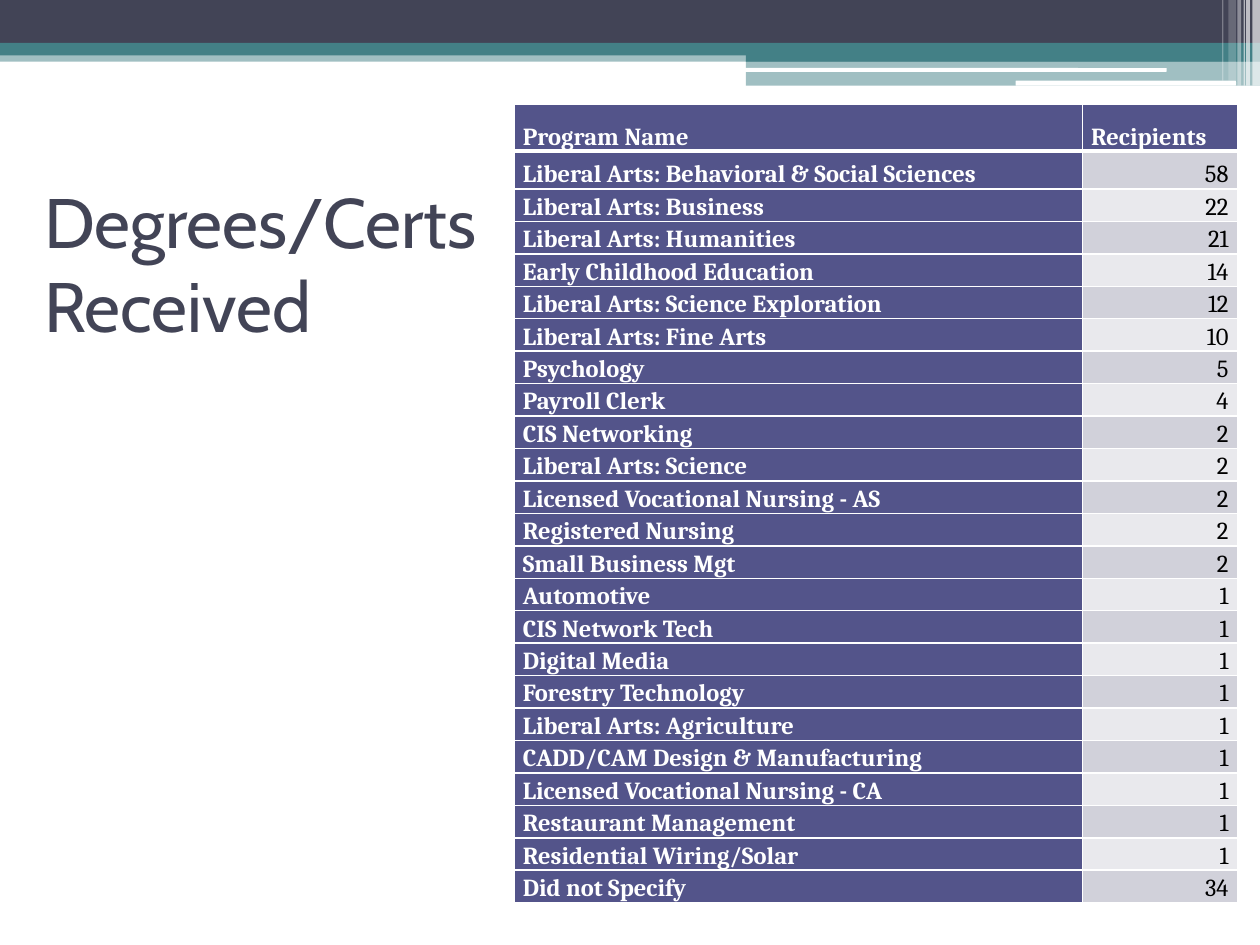
import pptx
import pptx.dml.color
import pptx.enum.shapes
import pptx.enum.text
import pptx.oxml
import pptx.oxml.ns
import pptx.util
from lxml import etree

Inches = pptx.util.Inches
Pt = pptx.util.Pt
RGBColor = pptx.dml.color.RGBColor
Anchor = pptx.enum.text.MSO_ANCHOR
Align = pptx.enum.text.PP_ALIGN
Shape = pptx.enum.shapes.MSO_SHAPE
qn = pptx.oxml.ns.qn

WHITE = RGBColor(0xFF, 0xFF, 0xFF)
BLACK = RGBColor(0x00, 0x00, 0x00)
SLATE = RGBColor(0x42, 0x44, 0x56)
TEAL = RGBColor(0x43, 0x80, 0x86)
INDIGO = RGBColor(0x53, 0x54, 0x8A)
STRIPES = (RGBColor(0xD1, 0xD1, 0xDA), RGBColor(0xE9, 0xE9, 0xED))

# Banner parts: left, top, width, height, colour, opacity in percent
BANDS = [
    (0, 0.4, 10, 0.09, TEAL, 50),
    (0, 0, 10, 0.34, SLATE, 100),
    (0, 0.34, 10, 0.1, TEAL, 100),
    (5.92, 0.39, 4.08, 0.1, TEAL, 100),
    (5.92, 0.48, 4.08, 0.2, TEAL, 50),
]
ROUNDED_LINES = [
    (5.91, 0.54, 3.35, 0.03, WHITE, 100),
    (8.06, 0.64, 1.75, 0.04, WHITE, 100),
]
VERTICAL_LINES = [
    (9.94, 0, 0.06, 0.68, WHITE, 65),
    (9.89, 0, 0.03, 0.68, WHITE, 65),
    (9.87, 0, 0.01, 0.68, WHITE, 60),
    (9.82, 0, 0.03, 0.68, WHITE, 40),
    (9.75, 0, 0.06, 0.64, WHITE, 20),
    (9.7, 0, 0.01, 0.64, WHITE, 30),
]

HEADINGS = ("Program Name", "Recipients")
PROGRAMS = [
    ("Liberal Arts: Behavioral & Social Sciences", 58),
    ("Liberal Arts: Business", 22),
    ("Liberal Arts: Humanities", 21),
    ("Early Childhood Education", 14),
    ("Liberal Arts: Science Exploration", 12),
    ("Liberal Arts: Fine Arts", 10),
    ("Psychology", 5),
    ("Payroll Clerk", 4),
    ("CIS Networking", 2),
    ("Liberal Arts: Science", 2),
    ("Licensed Vocational Nursing - AS", 2),
    ("Registered Nursing", 2),
    ("Small Business Mgt", 2),
    ("Automotive", 1),
    ("CIS Network Tech", 1),
    ("Digital Media", 1),
    ("Forestry Technology", 1),
    ("Liberal Arts: Agriculture", 1),
    ("CADD/CAM Design & Manufacturing", 1),
    ("Licensed Vocational Nursing - CA", 1),
    ("Restaurant Management", 1),
    ("Residential Wiring/Solar", 1),
    ("Did not Specify", 34),
]


def set_all(target, values):
    for name, value in values.items():
        setattr(target, name, value)


def add_band(page, box, kind, left, top, width, height, colour, opacity):
    """Add one borderless banner part, offset from the banner's corner."""
    band = page.shapes.add_shape(
        kind, box[0] + Inches(left), box[1] + Inches(top),
        Inches(width), Inches(height))
    band.shadow.inherit = False
    band.line.fill.background()
    band.fill.solid()
    band.fill.fore_color.rgb = colour
    if opacity < 100:
        tint = band.element.spPr.find(".//" + qn("a:srgbClr"))
        etree.SubElement(tint, qn("a:alpha"), val=str(opacity * 1000))


def add_banner(page, box):
    groups = ((Shape.RECTANGLE, BANDS), (Shape.ROUNDED_RECTANGLE, ROUNDED_LINES),
              (Shape.RECTANGLE, VERTICAL_LINES))
    for kind, parts in groups:
        for part in parts:
            add_band(page, box, kind, *part)


def place_title(page, box, text):
    title = page.shapes.title
    set_all(title, dict(zip(("left", "top", "width", "height"), box)))
    set_all(title.text_frame, {"text": text, "word_wrap": True,
                               "vertical_anchor": Anchor.MIDDLE})
    para = title.text_frame.paragraphs[0]
    para.alignment = Align.LEFT
    set_all(para.runs[0].font, {"name": "Cabin", "size": Pt(40)})
    para.runs[0].font.color.rgb = SLATE
    # Bring the title in front of the banner
    page.shapes.element.append(title.element)


def set_borders(cell, widths):
    props = cell._tc.get_or_add_tcPr()
    for side, points in widths.items():
        line = etree.SubElement(props, qn("a:ln" + side), w=str(Pt(points)))
        fill = etree.SubElement(line, qn("a:solidFill"))
        etree.SubElement(fill, qn("a:srgbClr"), val=str(WHITE))


def format_cell(cell, text, fill, colour, bold, align, widths):
    set_borders(cell, widths)
    cell.fill.solid()
    cell.fill.fore_color.rgb = fill
    set_all(cell, {"text": text, "vertical_anchor": Anchor.BOTTOM,
                   "margin_left": Inches(0.07), "margin_right": Inches(0.07),
                   "margin_top": 0, "margin_bottom": 0})
    para = cell.text_frame.paragraphs[0]
    set_all(para, {"alignment": align, "line_spacing": 1.15})
    span = para.runs[0]
    set_all(span.font, {"name": "Cambria", "size": Pt(14), "bold": bold})
    span.font.color.rgb = colour


def add_program_table(page, box):
    rows = [HEADINGS] + PROGRAMS
    table = page.shapes.add_table(len(rows), len(HEADINGS), *box).table
    table.columns[0].width = Inches(4.51)
    table.columns[1].width = box[2] - Inches(4.51)
    heights = [0.37, 0.3] + [0.25] * (len(rows) - 2)
    for r, (values, height) in enumerate(zip(rows, heights)):
        table.rows[r].height = Inches(height)
        widths = {"L": 1, "R": 1, "T": 3 if r == 1 else 1, "B": 3 if r == 0 else 1}
        for c, value in enumerate(values):
            if r == 0 or c == 0:
                style = (INDIGO, WHITE, True, Align.LEFT)
            else:
                style = (STRIPES[(r - 1) % 2], BLACK, False, Align.RIGHT)
            format_cell(table.cell(r, c), str(value), *style, widths)


def main():
    deck = pptx.Presentation()
    deck.slide_width, deck.slide_height = Inches(10), Inches(7.5)
    page = deck.slides.add_slide(deck.slide_layouts.get_by_name("Title Only"))
    add_banner(page, (0, 0))
    place_title(page, (Inches(0.25), Inches(0.67), Inches(3.92), Inches(2.83)),
                "Degrees/Certs Received")
    add_program_table(page, (Inches(4.08), Inches(0.83), Inches(5.74), Inches(6.19)))
    deck.save("out.pptx")


if __name__ == "__main__":
    main()
